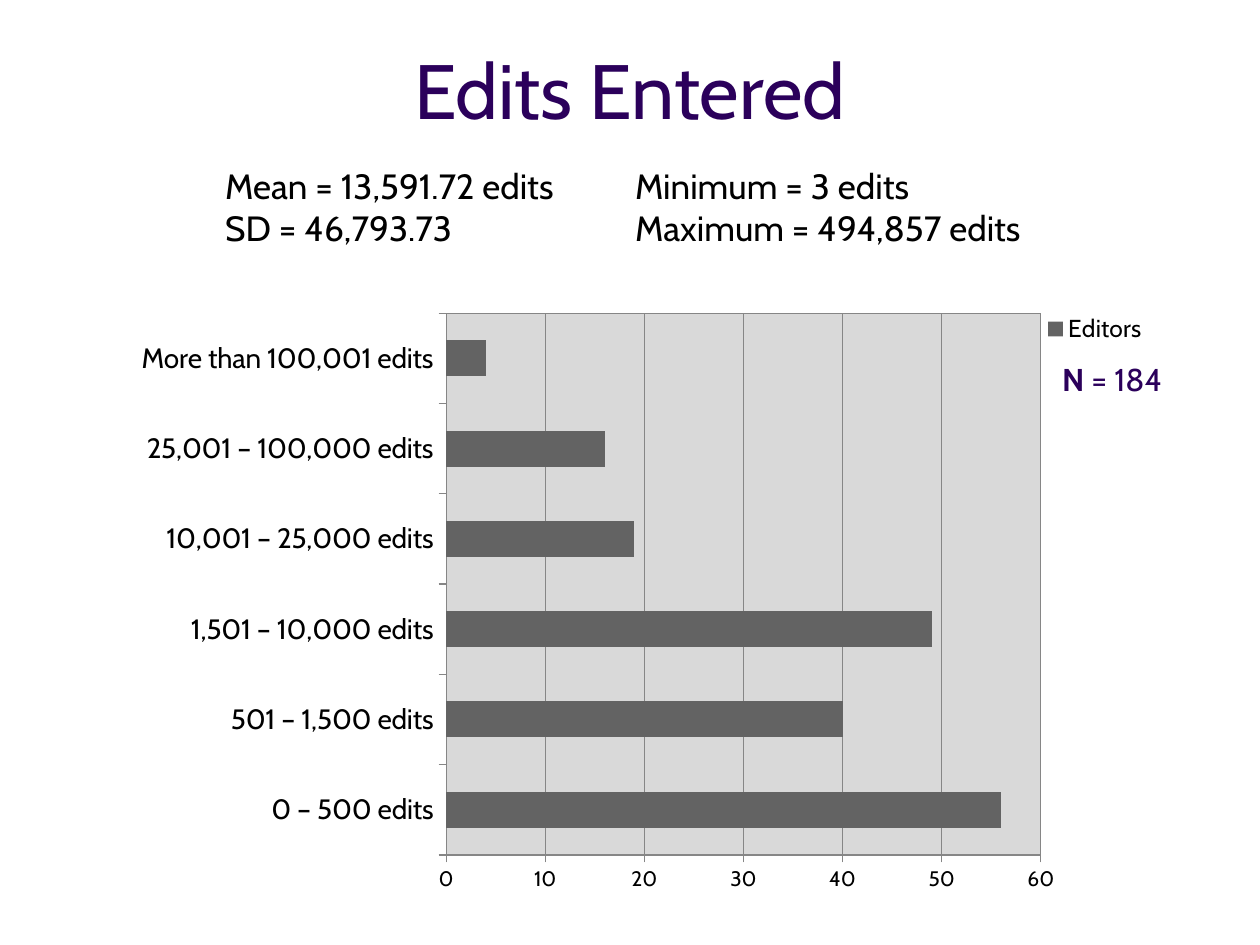
from lxml.etree import SubElement
from pptx import Presentation
from pptx.chart.data import CategoryChartData
from pptx.dml.color import RGBColor
from pptx.enum.chart import XL_CHART_TYPE, XL_LEGEND_POSITION, XL_TICK_MARK
from pptx.enum.text import MSO_ANCHOR, PP_ALIGN
from pptx.oxml.ns import qn
from pptx.util import Cm, Pt

COLORS = {
    "title": "2B005B",
    "text": "000000",
    "bar": "636363",
    "plot": "D9D9D9",
    "line": "868686",
}
FONT = "Cabin"
EDITS = {
    "0 – 500 edits": 56,
    "501 – 1,500 edits": 40,
    "1,501 – 10,000 edits": 49,
    "10,001 – 25,000 edits": 19,
    "25,001 – 100,000 edits": 16,
    "More than 100,001 edits": 4,
}
STATISTICS = [
    "Mean = 13,591.72 edits",
    "SD = 46,793.73",
    "Minimum = 3 edits",
    "Maximum = 494,857 edits",
]


def color(name):
    return RGBColor.from_string(COLORS[name])


def style_font(font, size, color_name="text"):
    font.name = FONT
    font.size = Pt(size)
    font.color.rgb = color(color_name)


def add_text(slide, box, lines, size, color_name="text"):
    """Add a text box with one paragraph for each line."""
    text_frame = slide.shapes.add_textbox(*map(Cm, box)).text_frame
    text_frame.word_wrap = True
    text_frame.text = "\n".join(lines)
    for paragraph in text_frame.paragraphs:
        for run in paragraph.runs:
            style_font(run.font, size, color_name)
    return text_frame


def add_title(slide, box):
    text_frame = add_text(slide, box, ["Edits Entered"], 44, "title")
    text_frame.vertical_anchor = MSO_ANCHOR.MIDDLE
    text_frame.paragraphs[0].alignment = PP_ALIGN.CENTER


def add_statistics(slide, box):
    """Add the figures in two columns of two lines each."""
    text_frame = add_text(slide, box, STATISTICS, 20)
    text_frame.margin_bottom = Cm(0.75)  # leaves room for two lines per column
    properties = text_frame._txBody.bodyPr
    properties.set("numCol", "2")
    properties.set("spcCol", str(Cm(0.13)))


def add_sample_size(slide, box):
    text_frame = add_text(slide, box, ["N"], 18, "title")
    text_frame.word_wrap = False
    paragraph = text_frame.paragraphs[0]
    paragraph.runs[0].font.bold = True
    run = paragraph.add_run()
    run.text = " = 184"
    style_font(run.font, 18, "title")


def set_layout(element, x, y, width, height, inner=False):
    """Place a chart part by fractions of the chart area."""
    layout = element.find(qn("c:layout"))
    if layout is None:
        layout = SubElement(element, qn("c:layout"))
        anchor = element.find(qn("c:legendPos"))
        if anchor is not None:
            anchor.addnext(layout)
        else:
            element.insert(0, layout)
    manual = SubElement(layout, qn("c:manualLayout"))
    values = {"layoutTarget": "inner"} if inner else {}
    values.update(xMode="edge", yMode="edge", x=x, y=y, w=width, h=height)
    for tag, value in values.items():
        SubElement(manual, qn(f"c:{tag}")).set("val", str(value))


def style_axis(axis, size):
    axis.major_tick_mark = XL_TICK_MARK.OUTSIDE
    axis.minor_tick_mark = XL_TICK_MARK.NONE
    axis.format.line.color.rgb = color("line")
    style_font(axis.tick_labels.font, size)


def fill_plot_area(plot_area):
    properties = SubElement(plot_area, qn("c:spPr"))
    line = SubElement(properties, qn("a:ln"), w=str(Pt(0.75)))
    for parent, name in ((properties, "plot"), (line, "line")):
        fill = SubElement(parent, qn("a:solidFill"))
        SubElement(fill, qn("a:srgbClr")).set("val", COLORS[name])
    properties.append(line)  # the schema wants the fill before the line


def add_edits_chart(slide, box):
    data = CategoryChartData()
    data.categories = list(EDITS)
    data.add_series("Editors", list(EDITS.values()))
    chart = slide.shapes.add_chart(
        XL_CHART_TYPE.BAR_CLUSTERED, *map(Cm, box), data
    ).chart
    chart.has_title = False
    chart.font.name = "Calibri"
    chart.font.size = Pt(10)

    plot = chart.plots[0]
    plot.gap_width = 150
    plot.vary_by_categories = False
    fill = plot.series[0].format.fill
    fill.solid()
    fill.fore_color.rgb = color("bar")

    style_axis(chart.category_axis, 16)
    style_axis(chart.value_axis, 12)
    chart.value_axis.minimum_scale = 0
    chart.value_axis.maximum_scale = 60
    chart.value_axis.major_unit = 10
    chart.value_axis.has_major_gridlines = True
    chart.value_axis.major_gridlines.format.line.color.rgb = color("line")

    chart.has_legend = True
    chart.legend.position = XL_LEGEND_POSITION.RIGHT
    chart.legend.include_in_layout = False
    style_font(chart.legend.font, 14)
    set_layout(chart.legend._element, 0.87, 0.04, 0.12, 0.07)

    plot_area = chart._chartSpace.chart.plotArea
    set_layout(plot_area, 0.33, 0.05, 0.55, 0.87, inner=True)
    fill_plot_area(plot_area)


def main():
    presentation = Presentation()
    presentation.slide_width = Cm(25.4)
    presentation.slide_height = Cm(19.05)
    slide = presentation.slides.add_slide(presentation.slide_layouts[6])
    add_title(slide, (1.27, 0.2, 22.86, 3.18))
    add_edits_chart(slide, (1.8, 5.69, 21.8, 12.55))
    add_statistics(slide, (4.29, 3.2, 16.9, 2.82))
    add_sample_size(slide, (21.16, 7.14, 2.8, 1.02))
    presentation.save("out.pptx")


if __name__ == "__main__":
    main()
